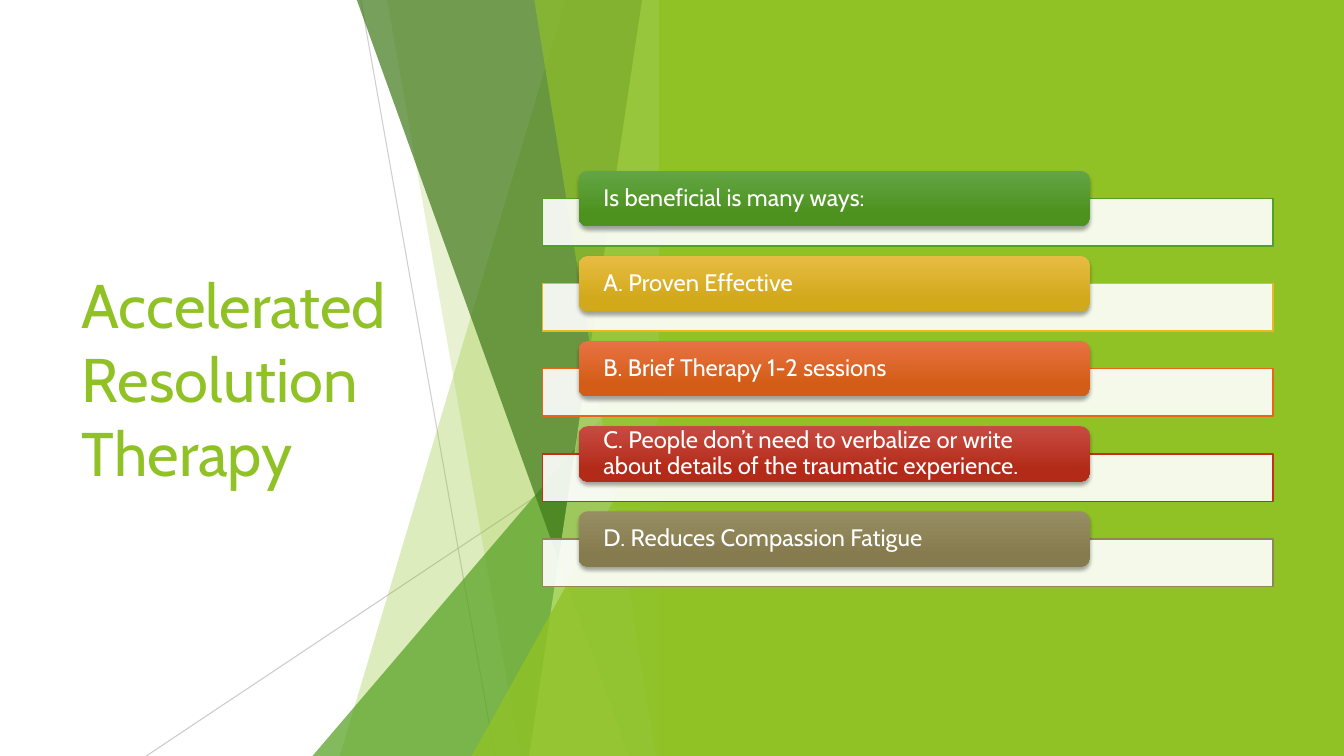
from lxml.etree import SubElement
from pptx import Presentation
from pptx.dml.color import RGBColor
from pptx.enum.shapes import MSO_CONNECTOR, MSO_SHAPE
from pptx.enum.text import MSO_ANCHOR, MSO_AUTO_SIZE, PP_ALIGN
from pptx.oxml.ns import qn
from pptx.util import Inches, Pt

FONT = "Cabin"
LIME, GREEN, WHITE, GREY = "90C226", "54A021", "FFFFFF", "BFBFBF"


def rgb(color):
    return RGBColor.from_string(color)


def set_alpha(fill, percent):
    """Make a solid fill or line colour partly transparent."""
    color = fill._xPr.find(qn("a:solidFill"))[0]
    SubElement(color, qn("a:alpha"), val=str(percent * 1000))


class Deck:
    """Slide style; all lengths are percentages of the slide's size."""

    def __init__(self):
        self.prs = Presentation()
        self.prs.slide_width, self.prs.slide_height = Inches(13.333), Inches(7.5)
        self.s = self.prs.slides.add_slide(self.prs.slide_layouts[5])

    def x(self, share):
        return round(self.prs.slide_width * share / 100)

    def y(self, share):
        return round(self.prs.slide_height * share / 100)

    def box(self, left, top, width, height):
        return self.x(left), self.y(top), self.x(width), self.y(height)

    def paint(self, sp, color, alpha=100):
        sp.shadow.inherit = False
        sp.line.fill.background()
        sp.fill.solid()
        sp.fill.fore_color.rgb = rgb(color)
        set_alpha(sp.fill, alpha)

    def add_text(self, sp, text, size, color, spacing):
        tf = sp.text_frame
        tf.word_wrap = True
        tf.auto_size = MSO_AUTO_SIZE.NONE
        tf.vertical_anchor = MSO_ANCHOR.MIDDLE
        p = tf.paragraphs[0]
        p.alignment = PP_ALIGN.LEFT
        p.line_spacing = spacing
        r = p.add_run()
        r.text = text
        r.font.name, r.font.size = FONT, Pt(size)
        r.font.color.rgb = rgb(color)

    def title(self, text, *place):
        sp = self.s.shapes.title
        sp.left, sp.top, sp.width, sp.height = self.box(*place)
        self.add_text(sp, text, 44, LIME, 1.0)

    def line(self, x1, y1, x2, y2, alpha):
        ln = self.s.shapes.add_connector(
            MSO_CONNECTOR.STRAIGHT, self.x(x1), self.y(y1), self.x(x2), self.y(y2))
        ln.line.width = Pt(0.75)
        ln.line.color.rgb = rgb(GREY)
        set_alpha(ln.line.fill, alpha)
        SubElement(ln._element.spPr, qn("a:effectLst"))

    def facet(self, top_x, bottom_x, right, color, alpha):
        """Full-height panel with a slanted left edge."""
        fb = self.s.shapes.build_freeform(self.x(top_x), 0)
        fb.add_line_segments([(self.x(right), 0),
                              (self.x(right), self.y(100)),
                              (self.x(bottom_x), self.y(100))], close=True)
        self.paint(fb.convert_to_shape(), color, alpha)

    def triangle(self, left, top, right, color, alpha):
        """Right triangle standing on the bottom edge, upright side at right."""
        sp = self.s.shapes.add_shape(
            MSO_SHAPE.ISOSCELES_TRIANGLE, *self.box(left, top, right - left, 100 - top))
        sp.adjustments[0] = 1
        self.paint(sp, color, alpha)

    def rect(self, *place, color, alpha=100, border=None):
        sp = self.s.shapes.add_shape(MSO_SHAPE.RECTANGLE, *self.box(*place))
        self.paint(sp, color, alpha)
        if border:
            sp.line.color.rgb = rgb(border)
            sp.line.width = Pt(1)

    def label(self, text, *place, light, dark):
        """Rounded bar with a vertical gradient and a soft shadow."""
        sp = self.s.shapes.add_shape(MSO_SHAPE.ROUNDED_RECTANGLE, *self.box(*place))
        sp.line.fill.background()
        sp.fill.gradient()
        sp.fill.gradient_angle = 270
        for stop, color, position in zip(sp.fill.gradient_stops, (light, dark), (0, 0.78)):
            stop.color.rgb = rgb(color)
            stop.position = position
        sp.shadow.inherit = False
        effects = sp._element.spPr.find(qn("a:effectLst"))
        shadow = SubElement(effects, qn("a:outerShdw"), blurRad=str(Pt(3)),
                            dist=str(Pt(2)), dir="5400000", rotWithShape="0")
        color = SubElement(shadow, qn("a:srgbClr"), val="000000")
        SubElement(color, qn("a:alpha"), val="35000")
        tf = sp.text_frame
        tf.margin_left = tf.margin_right = Inches(0.22)
        tf.margin_top = tf.margin_bottom = 0
        self.add_text(sp, text, 17, WHITE, 0.9)


def main():
    deck = Deck()
    deck.title("Accelerated Resolution Therapy", 5.33, 20.13, 29.1, 59.73)

    # Faceted backdrop, back to front, meeting at one upright seam
    seam = 49.97
    deck.line(26.85, 0, 36.83, 100, alpha=75)
    deck.line(seam, 53.73, 10.88, 100, alpha=80)
    deck.facet(42.08, 25.28, seam, LIME, 30)
    deck.facet(28.8, 38.7, seam, LIME, 20)
    deck.triangle(23.25, 44.4, seam, GREEN, 72)
    deck.facet(26.55, 46.8, seam, "3F7819", 70)
    deck.facet(47.78, 39.38, seam, "C0E474", 70)
    deck.facet(39.75, 48.83, seam, LIME, 65)
    deck.triangle(35.1, 52.4, seam, LIME, 80)
    deck.rect(49.05, 0, 50.95, 100, color=LIME)

    # List of benefits: text, border, gradient top, gradient bottom
    benefits = [
        ("Is beneficial is many ways:", GREEN, "63A545", "4D921E"),
        ("A. Proven Effective", "E6B91E", "E7BC43", "D2A91B"),
        ("B. Brief Therapy 1-2 sessions", "E76618", "E87242", "D35D16"),
        ("C. People don’t need to verbalize or write about details "
         "of the traumatic experience.", "C42F1A", "C74B42", "B32B18"),
        ("D. Reduces Compassion Fatigue", "918655", "988E64", "857B4E"),
    ]
    first, pitch, drop = 22.6, 11.26, 3.67
    for i, (text, border, light, dark) in enumerate(benefits):
        top = first + i * pitch
        deck.rect(40.35, top + drop, 54.38, 6.27, color=WHITE, alpha=90, border=border)
        deck.label(text, 43.05, top, 38.03, 7.33, light=light, dark=dark)

    deck.prs.save("out.pptx")


if __name__ == "__main__":
    main()
